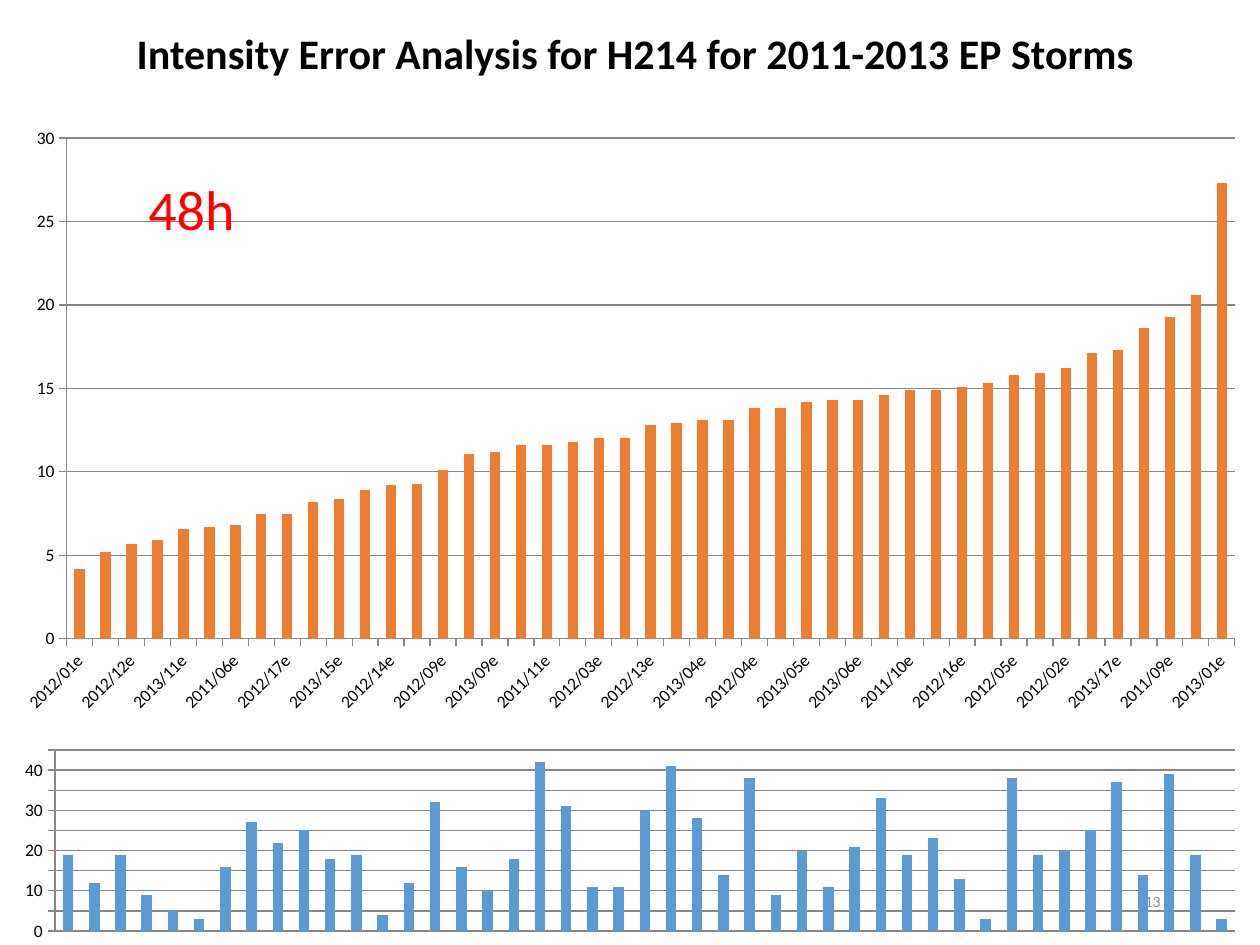
import pptx
import pptx.chart.data
import pptx.dml.color
import pptx.enum.chart
import pptx.enum.text
import pptx.util
from lxml import etree
from pptx.oxml.ns import qn
from pptx.util import Cm, Pt

FONT = "Calibri"
GREY = "878787"

storms = """2012/01e 2012/10e 2012/12e 2013/16e 2013/11e 2013/10e 2011/06e 2012/08e 2012/17e
2012/07e 2013/15e 2012/11e 2012/14e 2012/15e 2012/09e 2013/14e 2013/09e 2011/07e 2011/11e
2013/07e 2012/03e 2013/18e 2012/13e 2013/08e 2013/04e 2013/12e 2012/04e 2013/02e 2013/05e
2011/03e 2013/06e 2012/06e 2011/10e 2011/04e 2012/16e 2011/02e 2012/05e 2013/03e 2012/02e
2011/05e 2013/17e 2013/13e 2011/09e 2011/01e 2013/01e""".split()
errors = [4.2, 5.2, 5.7, 5.9, 6.6, 6.7, 6.8, 7.5, 7.5, 8.2, 8.4, 8.9, 9.2, 9.3, 10.1,
          11.1, 11.2, 11.6, 11.6, 11.8, 12, 12, 12.8, 12.9, 13.1, 13.1, 13.8, 13.8, 14.2, 14.3,
          14.3, 14.6, 14.9, 14.9, 15.1, 15.3, 15.8, 15.9, 16.2, 17.1, 17.3, 18.6, 19.3, 20.6, 27.3]
cases = [19, 12, 19, 9, 5, 3, 16, 27, 22, 25, 18, 19, 4, 12, 32,
         16, 10, 18, 42, 31, 11, 11, 30, 41, 28, 14, 38, 9, 20, 11,
         21, 33, 19, 23, 13, 3, 38, 19, 20, 25, 37, 14, 39, 19, 3]
numbers = [str(i + 1) for i in range(len(cases))]


def rgb(value):
    return pptx.dml.color.RGBColor.from_string(value)


def write(s, text, size, color, align, bold=False):
    tf = s.text_frame
    tf.word_wrap = True
    tf.auto_size = pptx.enum.text.MSO_AUTO_SIZE.NONE
    p = tf.paragraphs[0]
    p.alignment = align
    r = p.add_run()
    r.text = text
    r.font.name, r.font.size, r.font.bold = FONT, Pt(size), bold
    r.font.color.rgb = rgb(color)
    return tf


prs = pptx.Presentation()
prs.slide_width, prs.slide_height = Cm(25.4), Cm(19.05)
slide = prs.slides.add_slide(prs.slide_layouts[5])
ALIGN = pptx.enum.text.PP_ALIGN
ANCHOR = pptx.enum.text.MSO_ANCHOR

title = slide.shapes.title
title.left, title.top, title.width, title.height = Cm(1.06), Cm(0.43), Cm(23.5), Cm(1.27)
tf = write(title, "Intensity Error Analysis for H214 for 2011-2013 EP Storms",
           24, "000000", ALIGN.CENTER, True)
tf.vertical_anchor = ANCHOR.TOP

# top, height, categories, values, bar colour
charts = [
    (2.34, 12.27, storms, errors, "ED7D31"),
    (15.04, 4.01, numbers, cases, "5B9BD5"),
]
for top, height, cats, values, color in charts:
    data = pptx.chart.data.CategoryChartData()
    data.categories = cats
    data.add_series("Series 1", values)
    chart = slide.shapes.add_chart(pptx.enum.chart.XL_CHART_TYPE.COLUMN_CLUSTERED,
                                   0, Cm(top), Cm(25.4), Cm(height), data).chart
    chart.has_legend = chart.has_title = False
    chart.font.name, chart.font.size = FONT, Pt(10)
    chart.font.color.rgb = rgb("000000")

    plot = chart.plots[0]
    plot.gap_width, plot.vary_by_categories = 150, False
    fill = plot.series[0].format.fill
    fill.solid()
    fill.fore_color.rgb = rgb(color)

    axis = chart.value_axis
    axis.has_major_gridlines = True
    for part in (axis, axis.major_gridlines, chart.category_axis):
        part.format.line.color.rgb = rgb(GREY)

    if cats is storms:
        chart.category_axis.tick_labels.font.size = Pt(10)
        cat_ax = chart.element.find(".//" + qn("c:catAx"))
        cat_ax.find(".//" + qn("a:bodyPr")).set("rot", "-2700000")
        skip = etree.Element(qn("c:tickLblSkip"), val="2")
        cat_ax.find(qn("c:noMultiLvlLbl")).addprevious(skip)
    else:
        chart.category_axis.visible = False

lead_time = slide.shapes.add_textbox(Cm(2.74), Cm(3.39), Cm(3.18), Cm(1.63))
write(lead_time, "48h", 32, "FF0000", ALIGN.LEFT)

page_number = slide.shapes.add_textbox(Cm(17.93), Cm(17.65), Cm(5.72), Cm(1.02))
tf = write(page_number, "13", 9, "8C8C8C", ALIGN.RIGHT)
tf.vertical_anchor = ANCHOR.MIDDLE

prs.save("out.pptx")
